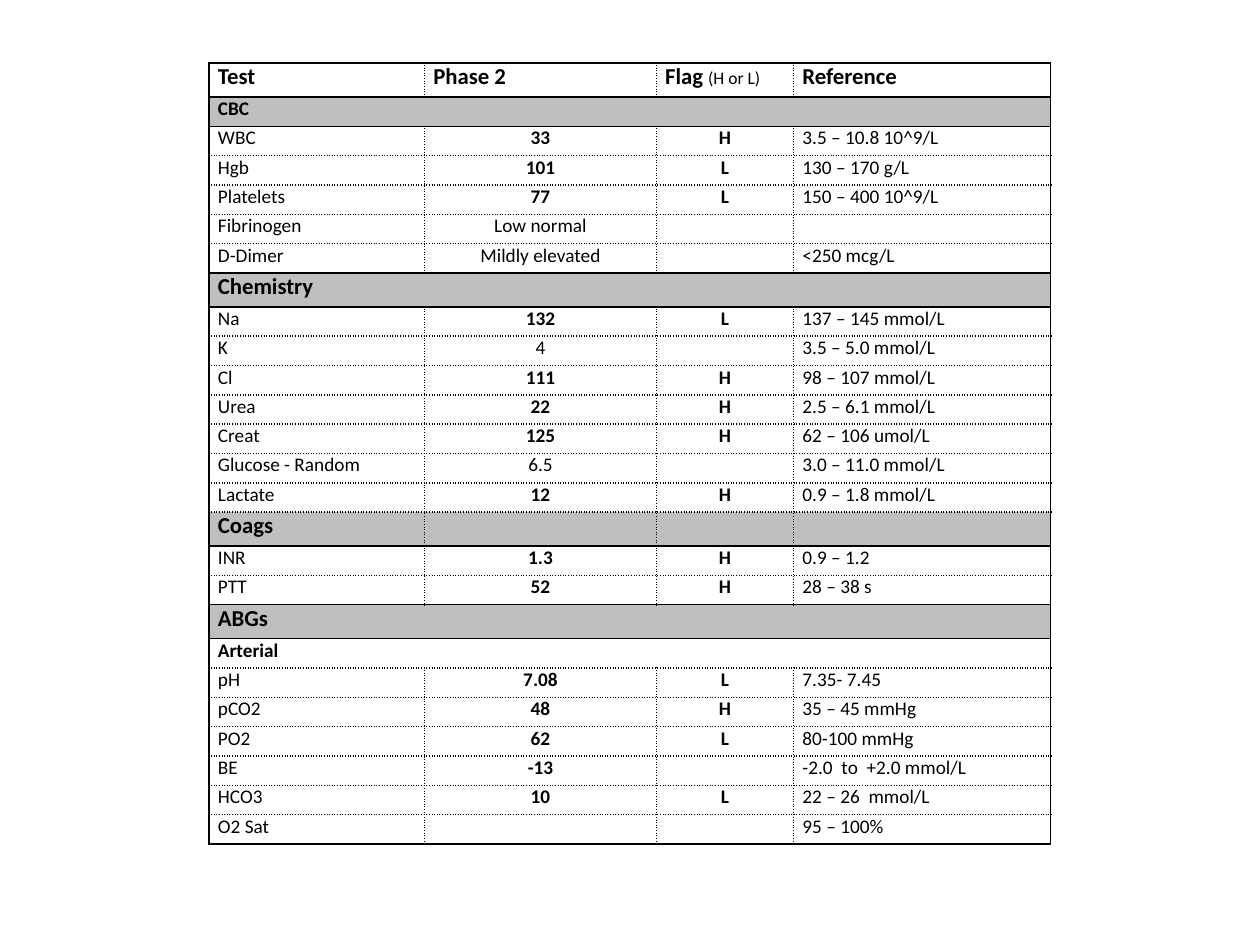
from lxml import etree
from pptx import Presentation
from pptx.dml.color import RGBColor
from pptx.enum.text import PP_ALIGN
from pptx.oxml.ns import qn
from pptx.util import Inches, Pt

CENTER, LEFT = PP_ALIGN.CENTER, PP_ALIGN.LEFT
COLORS = {"ink": "000000", "band": "BFBFBF", "paper": "FFFFFF"}
FONT = "Calibri"
BODY_SIZE, HEADING_SIZE, NOTE_SIZE = 11, 13, 10

COLUMN_WIDTHS = [1.71, 1.84, 1.09, 2.04]
TABLE_HEIGHT, HEADING_HEIGHT = 6.2, 0.27
HEADER = ["Test", "Phase 2", "Flag ", "Reference"]
FLAG_NOTE = "(H or L)"

# A row with one entry is a heading; the others are test, result, flag, reference.
ROWS = [
    HEADER,
    ["CBC"],
    ["WBC", "33", "H", "3.5 – 10.8 10^9/L"],
    ["Hgb", "101", "L", "130 – 170 g/L"],
    ["Platelets", "77", "L", "150 – 400 10^9/L"],
    ["Fibrinogen", "Low normal", "", ""],
    ["D-Dimer", "Mildly elevated", "", "<250 mcg/L"],
    ["Chemistry"],
    ["Na", "132", "L", "137 – 145 mmol/L"],
    ["K", "4", "", "3.5 – 5.0 mmol/L"],
    ["Cl", "111", "H", "98 – 107 mmol/L"],
    ["Urea", "22", "H", "2.5 – 6.1 mmol/L"],
    ["Creat", "125", "H", "62 – 106 umol/L"],
    ["Glucose - Random", "6.5", "", "3.0 – 11.0 mmol/L"],
    ["Lactate", "12", "H", "0.9 – 1.8 mmol/L"],
    ["Coags", "", "", ""],
    ["INR", "1.3", "H", "0.9 – 1.2"],
    ["PTT", "52", "H", "28 – 38 s"],
    ["ABGs"],
    ["Arterial"],
    ["pH", "7.08", "L", "7.35- 7.45"],
    ["pCO2", "48", "H", "35 – 45 mmHg"],
    ["PO2", "62", "L", "80-100 mmHg"],
    ["BE", "-13", "", "-2.0  to  +2.0 mmol/L"],
    ["HCO3", "10", "L", "22 – 26  mmol/L"],
    ["O2 Sat", "", "", "95 – 100%"],
]
BANDS = {"CBC", "Chemistry", "Coags", "ABGs"}
LARGE_ROWS = {"Test", "Chemistry", "Coags", "ABGs"}
BOLD_LABELS = BANDS | {"Arterial"}
PLAIN_RESULTS = {"Low normal", "Mildly elevated", "4", "6.5"}


def add_text(para, text, size=BODY_SIZE, bold=False, align=LEFT):
    para.alignment = align
    if not text:
        # The end mark sets the line height of an empty cell.
        etree.SubElement(para._p, qn("a:endParaRPr"), sz=str(size * 100))
        return
    span = para.add_run()
    span.text = text
    span.font.name = FONT
    span.font.size = Pt(size)
    span.font.bold = bold
    span.font.color.rgb = RGBColor.from_string(COLORS["ink"])


def set_borders(cell, dotted):
    """Draw the four sides; dotted holds the letters of the dotted ones."""
    properties = cell._tc.get_or_add_tcPr()
    for side in "LRTB":
        line = etree.SubElement(properties, qn(f"a:ln{side}"), w=str(Pt(1)))
        fill = etree.SubElement(line, qn("a:solidFill"))
        etree.SubElement(fill, qn("a:srgbClr"), val=COLORS["ink"])
        dash = "sysDot" if side in dotted else "solid"
        etree.SubElement(line, qn("a:prstDash"), val=dash)


def set_fill(cell, label):
    if label in BANDS or label == HEADER[0]:
        color = COLORS["band" if label in BANDS else "paper"]
        cell.fill.solid()
        cell.fill.fore_color.rgb = RGBColor.from_string(color)
    else:
        cell.fill.background()


def edge_is_solid(index):
    """Tell whether the horizontal line above the row at index is solid."""
    if index in (0, len(ROWS)):
        return True
    above, below = ROWS[index - 1], ROWS[index]
    return (above[0] in BANDS or above is HEADER
            or (len(below) == 1 and below[0] in BANDS))


def dotted_sides(row_index, column):
    last = len(COLUMN_WIDTHS) - 1
    inner = len(ROWS[row_index]) > 1
    sides = "" if edge_is_solid(row_index) else "T"
    sides += "" if edge_is_solid(row_index + 1) else "B"
    sides += "L" if inner and column > 0 else ""
    sides += "R" if inner and column < last else ""
    return sides


def fill_row(table, index, entries):
    label = entries[0]
    is_header = entries is HEADER
    size = HEADING_SIZE if label in LARGE_ROWS else BODY_SIZE
    for column in range(len(COLUMN_WIDTHS)):
        cell = table.cell(index, column)
        cell.margin_left = cell.margin_right = Inches(0.07)
        cell.margin_top = cell.margin_bottom = 0
        set_borders(cell, dotted_sides(index, column))
        set_fill(cell, label)
        text = entries[column] if column < len(entries) else ""
        is_result = column in (1, 2) and not is_header
        bold = (is_header or text in BOLD_LABELS
                or (is_result and text not in PLAIN_RESULTS))
        add_text(cell.text_frame.paragraphs[0], text, size=size, bold=bold,
                 align=CENTER if is_result else LEFT)
    if len(entries) == 1:
        table.cell(index, 0).merge(table.cell(index, len(COLUMN_WIDTHS) - 1))


def add_results_table(page):
    frame = page.shapes.add_table(
        len(ROWS), len(COLUMN_WIDTHS), Inches(1.66), Inches(0.5),
        Inches(sum(COLUMN_WIDTHS)), Inches(TABLE_HEIGHT))
    table = frame.table
    table.first_row = table.horz_banding = False
    for column, width in zip(table.columns, COLUMN_WIDTHS):
        column.width = Inches(width)
    large_count = len(LARGE_ROWS)
    body_height = ((TABLE_HEIGHT - large_count * HEADING_HEIGHT)
                   / (len(ROWS) - large_count))
    for index, entries in enumerate(ROWS):
        large = entries[0] in LARGE_ROWS
        table.rows[index].height = Inches(HEADING_HEIGHT if large else body_height)
        fill_row(table, index, entries)
    add_text(table.cell(0, 2).text_frame.paragraphs[0], FLAG_NOTE, size=NOTE_SIZE)


def main():
    deck = Presentation()
    deck.slide_width, deck.slide_height = Inches(10), Inches(7.5)
    page = deck.slides.add_slide(deck.slide_layouts[6])
    add_results_table(page)
    deck.save("out.pptx")


if __name__ == "__main__":
    main()
